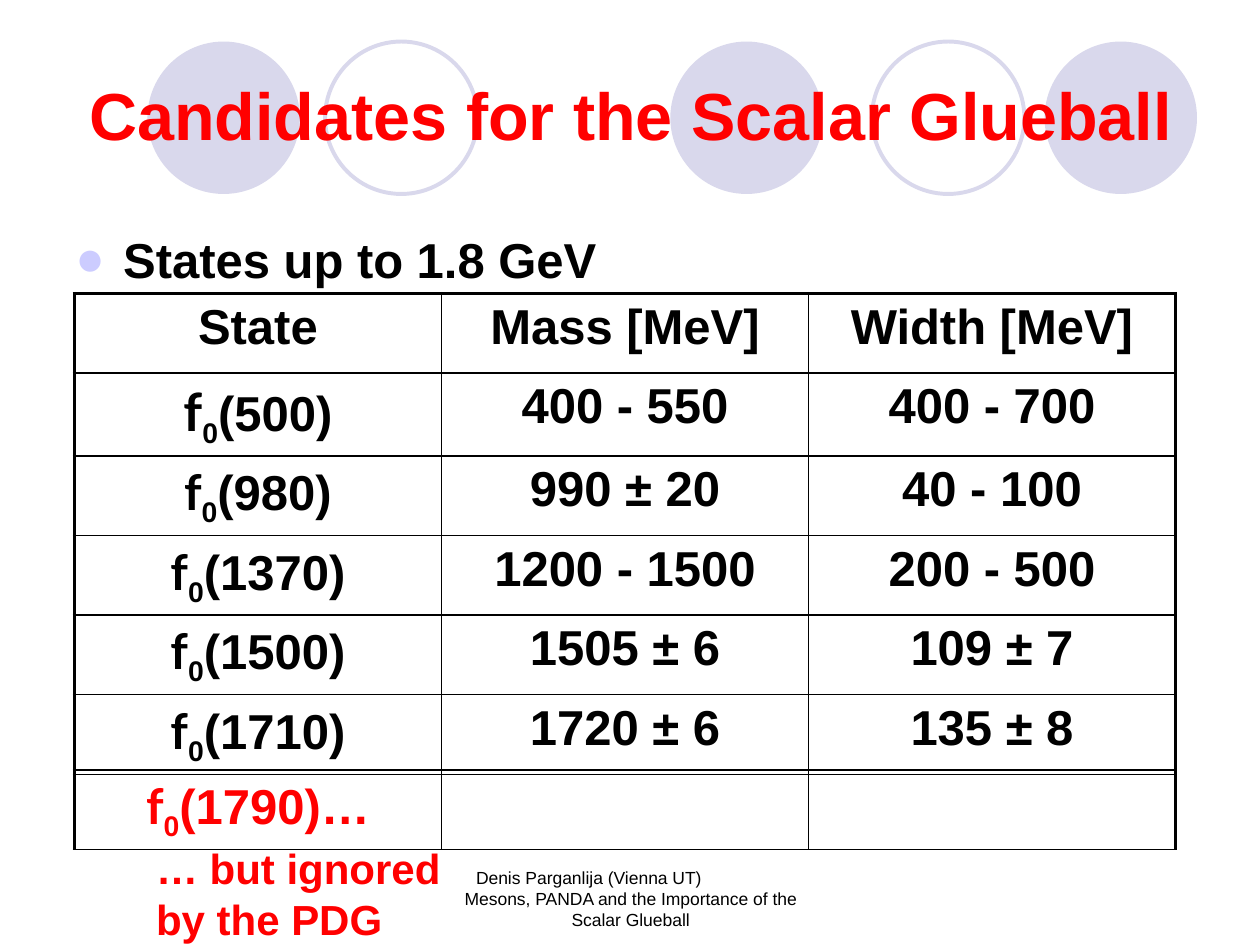
from dataclasses import dataclass

from lxml.etree import SubElement
from pptx import Presentation
from pptx.dml.color import RGBColor
from pptx.enum.shapes import MSO_SHAPE
from pptx.enum.text import MSO_ANCHOR, PP_ALIGN
from pptx.oxml import parse_xml
from pptx.oxml.ns import nsdecls, qn
from pptx.util import Inches, Pt


@dataclass(frozen=True)
class Theme:
    font: str = "Arial"
    symbol_font: str = "Lato"
    black: RGBColor = RGBColor(0, 0, 0)
    red: RGBColor = RGBColor(0xFF, 0, 0)
    circle: RGBColor = RGBColor(0xD9, 0xD8, 0xEC)
    bullet: str = "CCCCFF"
    title: int = 38
    body: int = 28
    remark: int = 24
    footer: int = 10
    thin: float = 1
    thick: float = 2.25


theme = Theme()


def style(p, size, color, bold=True, align=None):
    p.font.name, p.font.size, p.font.bold = theme.font, Pt(size), bold
    p.font.color.rgb = color
    p.alignment = align


def add_state_table(s, top, rows, color, top_line):
    """Add a bordered table; a tuple (mass, symbol size) becomes an f0 state."""
    table = s.shapes.add_table(len(rows), 3, Inches(0.59), Inches(top),
                               Inches(8.74), Inches(0.63 * len(rows))).table
    table.first_row = table.horz_banding = False
    for i, row in enumerate(rows):
        for j, value in enumerate(row):
            cell = table.cell(i, j)
            tc_pr = cell._tc.get_or_add_tcPr()
            widths = {
                "L": theme.thick if j == 0 else theme.thin,
                "R": theme.thick if j == len(row) - 1 else theme.thin,
                "T": top_line if i == 0 else theme.thin,
                "B": theme.thin,
            }
            for side, width in widths.items():
                tc_pr.append(parse_xml(
                    f'<a:ln{side} {nsdecls("a")} w="{Pt(width)}"><a:solidFill>'
                    f'<a:srgbClr val="{theme.black}"/></a:solidFill></a:ln{side}>'))
            cell.fill.background()
            p = cell.text_frame.paragraphs[0]
            style(p, theme.body, color, align=PP_ALIGN.CENTER)
            if isinstance(value, str):
                p.text = value
                continue
            mass, symbol_size = value
            symbol, index, label = [p.add_run() for _ in range(3)]
            symbol.text, index.text, label.text = "f", "0", mass
            symbol.font.name, symbol.font.size = theme.symbol_font, Pt(symbol_size)
            index._r.get_or_add_rPr().set("baseline", "-25000")


prs = Presentation()
prs.slide_width, prs.slide_height = Inches(10), Inches(7.5)
s = prs.slides.add_slide(prs.slide_layouts[5])

# Decorative circles
for left, filled in [(1.17, True), (2.58, False), (5.32, True),
                     (6.92, False), (8.29, True)]:
    sp = s.shapes.add_shape(MSO_SHAPE.OVAL, Inches(left), Inches(0.33),
                            Inches(1.21), Inches(1.21))
    sp.shadow.inherit = False
    if filled:
        sp.fill.solid()
        sp.fill.fore_color.rgb = theme.circle
        sp.line.fill.background()
    else:
        sp.fill.background()
        sp.line.color.rgb = theme.circle
        sp.line.width = Pt(theme.thick)

# Title, brought in front of the circles
title = s.shapes.title
title.left, title.top = Inches(0.51), Inches(0.28)
title.width, title.height = Inches(9), Inches(1.25)
tf = title.text_frame
tf.text = "Candidates for the Scalar Glueball"
tf.vertical_anchor = MSO_ANCHOR.MIDDLE
style(tf.paragraphs[0], theme.title, theme.red, align=PP_ALIGN.CENTER)
title._element.getparent().append(title._element)

# Bulleted statement
tf = s.shapes.add_textbox(Inches(0.5), Inches(1.77), Inches(8.67), Inches(0.55)).text_frame
tf.word_wrap = True
p = tf.paragraphs[0]
p.text = "States up to 1.8 GeV"
p_pr = p._p.get_or_add_pPr()
p_pr.set("marL", str(Inches(0.38)))
p_pr.set("indent", str(Inches(-0.38)))
bullet_color = SubElement(p_pr, qn("a:buClr"))
SubElement(bullet_color, qn("a:srgbClr")).set("val", theme.bullet)
SubElement(p_pr, qn("a:buFont")).set("typeface", theme.font)
SubElement(p_pr, qn("a:buChar")).set("char", "●")
style(p, theme.body, theme.black)

# Established states, then the extra candidate
add_state_table(s, 2.33, [
    ("State", "Mass [MeV]", "Width [MeV]"),
    (("(500)", 30), "400 - 550", "400 - 700"),
    (("(980)", 28), "990 ± 20", "40 - 100"),
    (("(1370)", 28), "1200 - 1500", "200 - 500"),
    (("(1500)", 28), "1505 ± 6", "109 ± 7"),
    (("(1710)", 28), "1720 ± 6", "135 ± 8"),
], theme.black, theme.thick)
add_state_table(s, 6.11, [(("(1790)…", 28), "", "")], theme.red, theme.thin)

# Remark below the table
tf = s.shapes.add_textbox(Inches(1.14), Inches(6.64), Inches(2.83), Inches(0.91)).text_frame
tf.word_wrap = True
tf.text = "… but ignored\nby the PDG"
for p in tf.paragraphs:
    style(p, theme.remark, theme.red)

# Footer
tf = s.shapes.add_textbox(Inches(3.42), Inches(6.83), Inches(3.17), Inches(0.5)).text_frame
tf.word_wrap = True
tf.text = ("Denis Parganlija (Vienna UT)\n"
           "Mesons, PANDA and the Importance of the Scalar Glueball")
author, talk = tf.paragraphs
style(author, theme.footer, theme.black, bold=False, align=PP_ALIGN.LEFT)
author._p.get_or_add_pPr().set("marL", str(Inches(0.26)))
style(talk, theme.footer, theme.black, bold=False, align=PP_ALIGN.CENTER)

prs.save("out.pptx")
